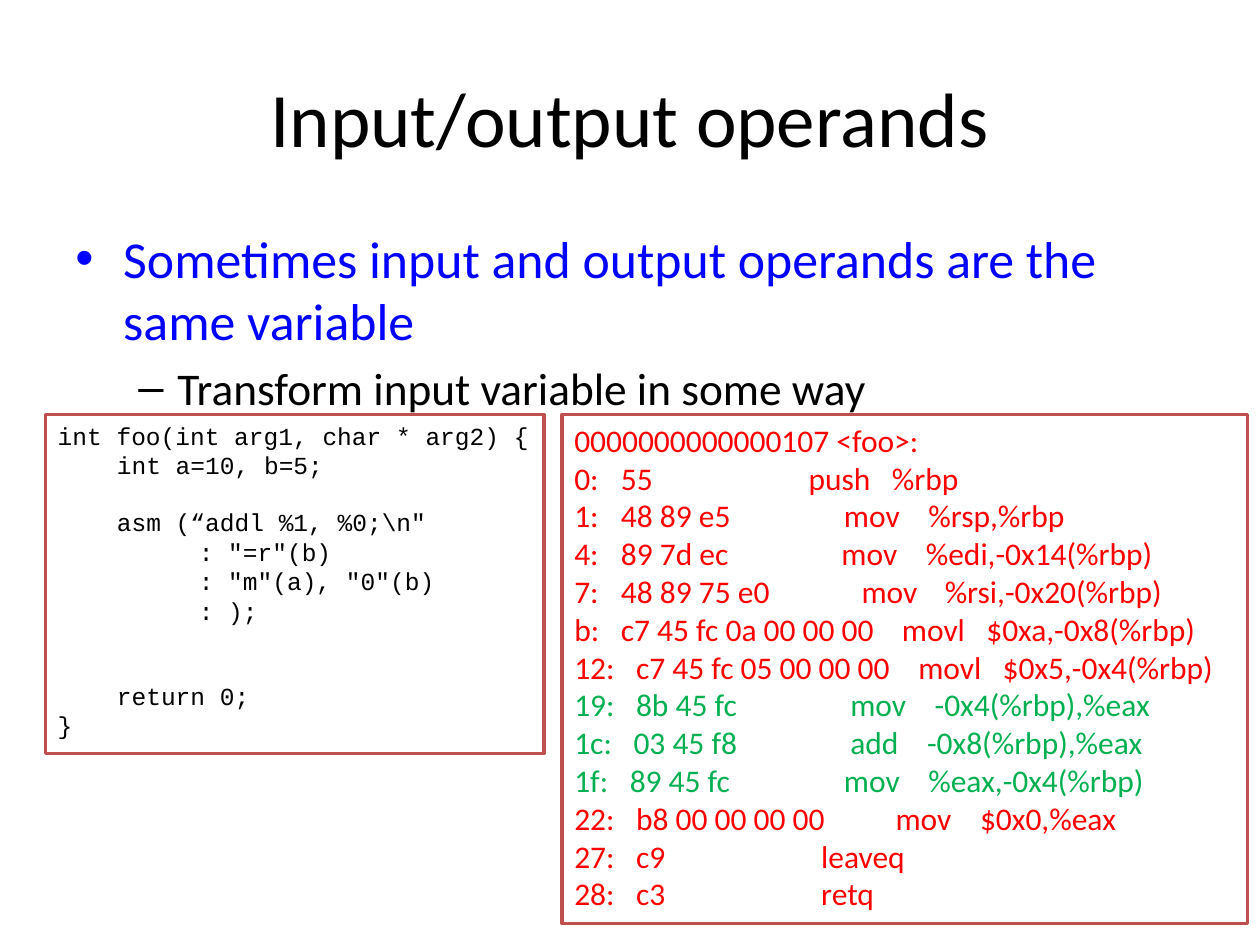
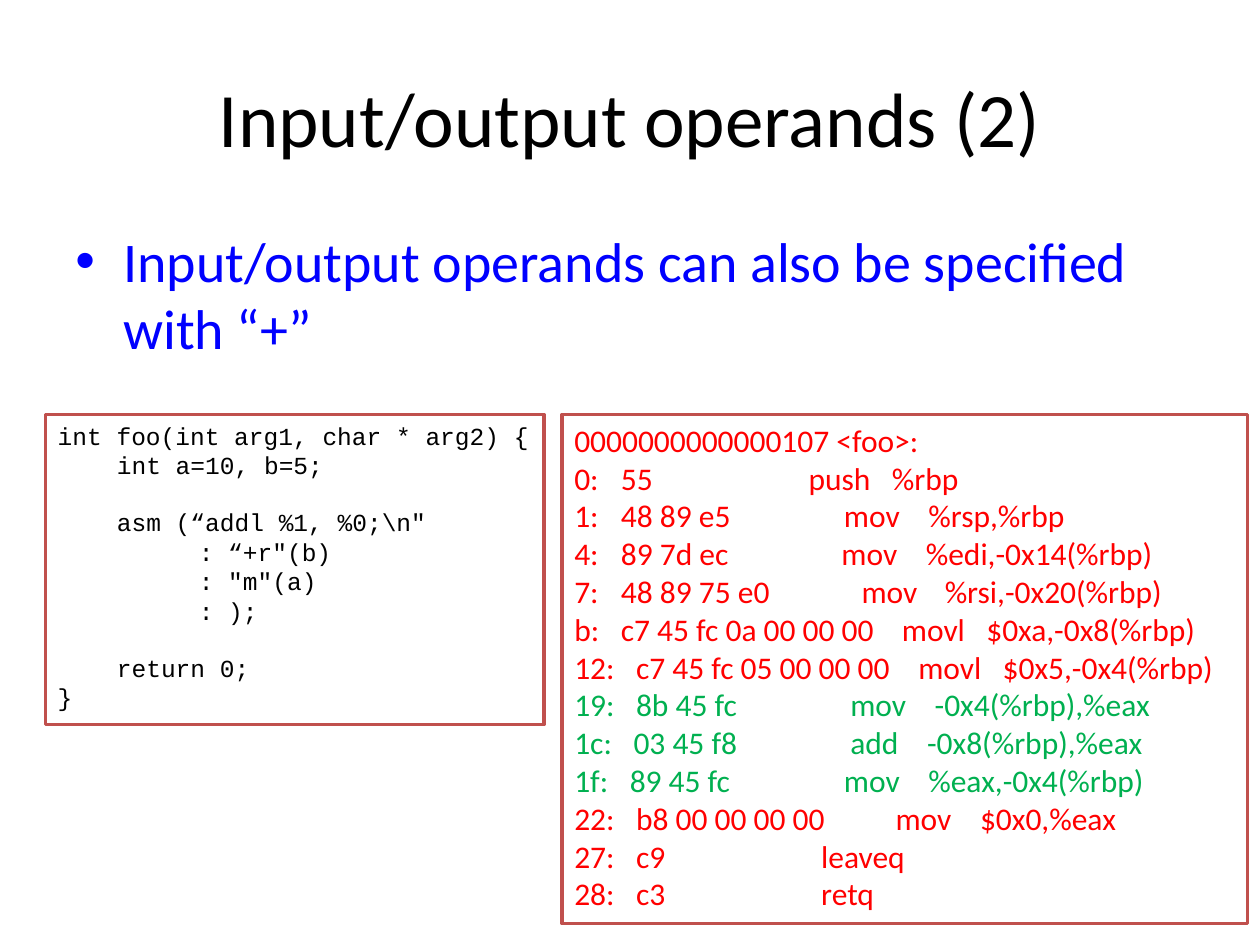
from lxml import etree
from pptx import Presentation
from pptx.dml.color import RGBColor
from pptx.enum.shapes import MSO_SHAPE
from pptx.enum.text import MSO_ANCHOR, MSO_AUTO_SIZE, PP_ALIGN
from pptx.oxml.ns import qn
from pptx.util import Inches, Pt

RECTANGLE = MSO_SHAPE.RECTANGLE
LEFT, CENTER = PP_ALIGN.LEFT, PP_ALIGN.CENTER
TOP, MIDDLE = MSO_ANCHOR.TOP, MSO_ANCHOR.MIDDLE
GROW = MSO_AUTO_SIZE.SHAPE_TO_FIT_TEXT

BLACK, WHITE, BLUE = "000000", "FFFFFF", "0000FF"
RED, GREEN, BORDER = "FF0000", "00B050", "C0504D"
BODY_FONT, CODE_FONT = "Calibri", "Courier New"
BOX_TOP = 3.29
CODE_SIZE, CODE_LINE = 14, 15.86
STATEMENT, OPERAND = 0.47, 1.12
BULLETS = {0: ("•", 0.38, -0.38), 1: ("–", 0.81, -0.31)}

ASSEMBLY = [
    (RED, ["0000000000000107 <foo>:"], []),
    (RED, ["0:", "55", "push", "%rbp"], [0.37, 1.86, 2.52]),
    (RED, ["1:", "48 89 e5", "mov", "%rsp,%rbp"], [0.37, 2.14, 2.81]),
    (RED, ["4:", "89 7d ec", "mov", "%edi,-0x14(%rbp)"], [0.37, 2.12, 2.79]),
    (RED, ["7:", "48 89 75 e0", "mov", "%rsi,-0x20(%rbp)"], [0.37, 2.28, 2.94]),
    (RED, ["b:", "c7 45 fc 0a 00 00 00", "movl", "$0xa,-0x8(%rbp)"], [0.37, 2.6, 3.27]),
    (RED, ["12:", "c7 45 fc 05 00 00 00", "movl", "$0x5,-0x4(%rbp)"], [0.49, 2.73, 3.4]),
    (GREEN, ["19:", "8b 45 fc", "mov", "-0x4(%rbp),%eax"], [0.49, 2.19, 2.86]),
    (GREEN, ["1c:", "03 45 f8", "add", "-0x8(%rbp),%eax"], [0.47, 2.19, 2.8]),
    (GREEN, ["1f:", "89 45 fc", "mov", "%eax,-0x4(%rbp)"], [0.44, 2.14, 2.81]),
    (RED, ["22:", "b8 00 00 00 00", "mov", "$0x0,%eax"], [0.49, 2.55, 3.22]),
    (RED, ["27:", "c9", "leaveq"], [0.49, 1.96]),
    (RED, ["28:", "c3", "retq"], [0.49, 1.96]),
]


def color(hex_value):
    return RGBColor.from_string(hex_value)


def fill_paragraph(paragraph, text, font, size, hex_value, align=LEFT):
    paragraph.text = text
    paragraph.alignment = align
    paragraph.font.name = font
    paragraph.font.size = Pt(size)
    paragraph.font.color.rgb = color(hex_value)


def next_paragraph(text_frame, index):
    return text_frame.add_paragraph() if index else text_frame.paragraphs[0]


def set_indent(paragraph, left, first=0):
    properties = paragraph._p.get_or_add_pPr()
    properties.set("marL", str(Inches(left)))
    properties.set("indent", str(Inches(first)))
    return properties


def set_tabs(paragraph, stops):
    properties = paragraph._p.get_or_add_pPr()
    tab_list = etree.SubElement(properties, qn("a:tabLst"))
    for stop in stops:
        etree.SubElement(tab_list, qn("a:tab"), pos=str(Inches(stop)), algn="l")


def add_text_area(slide, top, height, anchor):
    shape = slide.shapes.add_textbox(Inches(0.5), Inches(top), Inches(9), Inches(height))
    text_frame = shape.text_frame
    text_frame.word_wrap = True
    text_frame.vertical_anchor = anchor
    return text_frame


def add_title(slide, title):
    text_frame = add_text_area(slide, 0.3, 1.25, MIDDLE)
    fill_paragraph(text_frame.paragraphs[0], title, BODY_FONT, 44, BLACK, CENTER)


def add_bullets(slide, items):
    text_frame = add_text_area(slide, 1.75, 1.44, TOP)
    for index, (level, text, size, hex_value) in enumerate(items):
        paragraph = next_paragraph(text_frame, index)
        character, left, first = BULLETS[level]
        properties = set_indent(paragraph, left, first)
        etree.SubElement(properties, qn("a:buFont"), typeface="Arial")
        etree.SubElement(properties, qn("a:buChar"), char=character)
        paragraph.level = level
        paragraph.space_before = Pt(size * 0.2)
        fill_paragraph(paragraph, text, BODY_FONT, size, hex_value)


def add_framed_box(slide, left, width, height, wrap):
    shape = slide.shapes.add_shape(
        RECTANGLE, Inches(left), Inches(BOX_TOP), Inches(width), Inches(height))
    shape.shadow.inherit = False
    shape.fill.solid()
    shape.fill.fore_color.rgb = color(WHITE)
    shape.line.color.rgb = color(BORDER)
    shape.line.width = Pt(2)
    text_frame = shape.text_frame
    text_frame.word_wrap = wrap
    text_frame.auto_size = GROW
    text_frame.vertical_anchor = TOP
    return text_frame


def add_assembly(slide):
    text_frame = add_framed_box(slide, 4.46, 5.44, 4.04, True)
    for index, (hex_value, columns, stops) in enumerate(ASSEMBLY):
        paragraph = next_paragraph(text_frame, index)
        if stops:
            set_tabs(paragraph, stops)
        fill_paragraph(paragraph, "\t".join(columns), BODY_FONT, 18, hex_value)


def add_source_code(slide, height, operands, return_gap):
    lines = [
        (0, 0, "int foo(int arg1, char * arg2) {"),
        (STATEMENT, 0, "int a=10, b=5;"),
        (STATEMENT, 1, "asm (“addl %1, %0;\\n\""),
        *[(OPERAND, 0, operand) for operand in operands],
        (OPERAND, 0, ": );"),
        (STATEMENT, return_gap, "return 0;"),
        (0, 0, "}"),
    ]
    text_frame = add_framed_box(slide, 0.36, 3.96, height, False)
    for index, (indent, gap_lines, text) in enumerate(lines):
        paragraph = next_paragraph(text_frame, index)
        set_indent(paragraph, indent)
        paragraph.space_before = Pt(gap_lines * CODE_LINE)
        fill_paragraph(paragraph, text, CODE_FONT, CODE_SIZE, BLACK)


def add_operand_slide(presentation, title, bullets, code_height, operands, return_gap):
    slide = presentation.slides.add_slide(presentation.slide_layouts[6])
    add_title(slide, title)
    add_bullets(slide, bullets)
    add_assembly(slide)
    add_source_code(slide, code_height, operands, return_gap)


def main():
    presentation = Presentation()
    presentation.slide_width = Inches(10)
    presentation.slide_height = Inches(7.5)
    add_operand_slide(
        presentation, "Input/output operands",
        [(0, "Sometimes input and output operands are the same variable", 29.6, BLUE),
         (1, "Transform input variable in some way", 25.9, BLACK)],
        2.69, [': "=r"(b)', ': "m"(a), "0"(b)'], 2)
    add_operand_slide(
        presentation, "Input/output operands (2)",
        [(0, "Input/output operands can also be specified with “+”", 32, BLUE)],
        2.46, [': “+r"(b)', ': "m"(a)'], 1)
    presentation.save("out.pptx")


if __name__ == "__main__":
    main()
